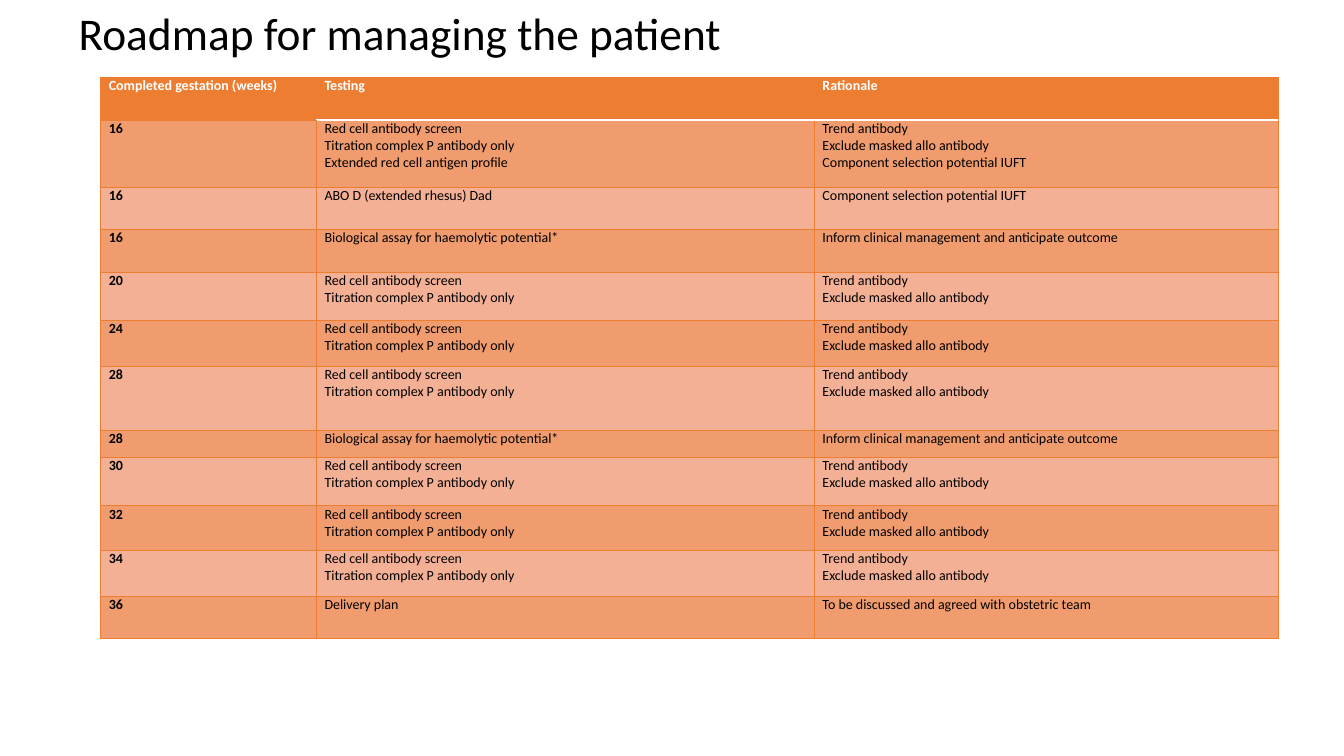
from dataclasses import dataclass

from lxml.etree import SubElement
from pptx import Presentation
from pptx.dml.color import RGBColor
from pptx.enum.text import MSO_ANCHOR, MSO_AUTO_SIZE, PP_ALIGN
from pptx.oxml.ns import qn
from pptx.util import Inches, Pt


@dataclass
class Theme:
    font: str = "Calibri"
    head: float = 32.4
    body: float = 10
    ink: str = "000000"
    paper: str = "FFFFFF"
    accent: str = "ED7D31"
    dark: str = "F19C6E"
    light: str = "F4B095"


def write(frame, text, size=Theme.body, color=Theme.ink, bold=False, gap=1.0):
    """Fill a text frame, one paragraph for each line of text."""
    frame.text = text
    for par in frame.paragraphs:
        par.alignment = PP_ALIGN.LEFT
        par.line_spacing = gap
        font = par.font
        font.name, font.size, font.bold = Theme.font, Pt(size), bold
        font.color.rgb = RGBColor.from_string(color)


def edge(cell, side, color, width):
    """Draw one border; call in the order L, R, T, B."""
    line = SubElement(cell._tc.get_or_add_tcPr(), qn(f"a:ln{side}"), w=str(Pt(width)))
    fill = SubElement(line, qn("a:solidFill"))
    SubElement(fill, qn("a:srgbClr"), val=color)


deck = Presentation()
deck.slide_width, deck.slide_height = Inches(13.33), Inches(7.5)
# The slide is a grid of 100 columns by 100 rows.
col, row = deck.slide_width / 100, deck.slide_height / 100
slide = deck.slides.add_slide(deck.slide_layouts[5])

title = slide.shapes.title
title.left, title.top = int(5.1 * col), int(1.73 * row)
title.width, title.height = int(90 * col), int(6.13 * row)
frame = title.text_frame
frame.auto_size = MSO_AUTO_SIZE.NONE
frame.vertical_anchor = MSO_ANCHOR.MIDDLE
write(frame, "Roadmap for managing the patient", size=Theme.head, gap=0.9)

screen = "Red cell antibody screen\nTitration complex P antibody only"
trend = "Trend antibody\nExclude masked allo antibody"
select = "Component selection potential IUFT"
assay = "Biological assay for haemolytic potential*"
inform = "Inform clinical management and anticipate outcome"

# Each plan entry: height in grid rows, then the three cells.
plan = [
    (5.6, "Completed gestation (weeks)", "Testing", "Rationale"),
    (8.93, "16", f"{screen}\nExtended red cell antigen profile", f"{trend}\n{select}"),
    (5.6, "16", "ABO D (extended rhesus) Dad", select),
    (5.6, "16", assay, inform),
    (6.4, "20", screen, trend),
    (6.13, "24", screen, trend),
    (8.4, "28", screen, trend),
    (3.6, "28", assay, inform),
    (6.4, "30", screen, trend),
    (5.87, "32", screen, trend),
    (6.13, "34", screen, trend),
    (5.6, "36", "Delivery plan", "To be discussed and agreed with obstetric team"),
]
widths = [16.05, 37.05, 34.5]
tall = sum(entry[0] for entry in plan)
table = slide.shapes.add_table(
    len(plan), len(widths), int(7.5 * col), int(10.27 * row),
    int(sum(widths) * col), int(tall * row)).table
table.horz_banding = False
for x, width in enumerate(widths):
    table.columns[x].width = int(width * col)

for y, (height, *texts) in enumerate(plan):
    table.rows[y].height = int(height * row)
    top = y == 0
    band = Theme.accent if top else Theme.dark if y % 2 else Theme.light
    for x, text in enumerate(texts):
        cell = table.cell(y, x)
        cell.margin_left = cell.margin_right = Inches(0.08)
        cell.margin_top = cell.margin_bottom = 0
        cell.vertical_anchor = MSO_ANCHOR.TOP
        write(cell.text_frame, text, bold=top or x == 0,
              color=Theme.paper if top else Theme.ink)
        rule = (Theme.paper, 1) if x else (Theme.accent, 0.5)
        thin = (Theme.accent, 0.5)
        thick = thin if top else (Theme.accent, 1)
        edge(cell, "L", *(thick if x == 1 else thin))
        edge(cell, "R", *(thick if x == 0 else thin))
        edge(cell, "T", *(rule if y == 1 else thin))
        edge(cell, "B", *(rule if top else thin))
        cell.fill.solid()
        cell.fill.fore_color.rgb = RGBColor.from_string(band)

deck.save("out.pptx")
